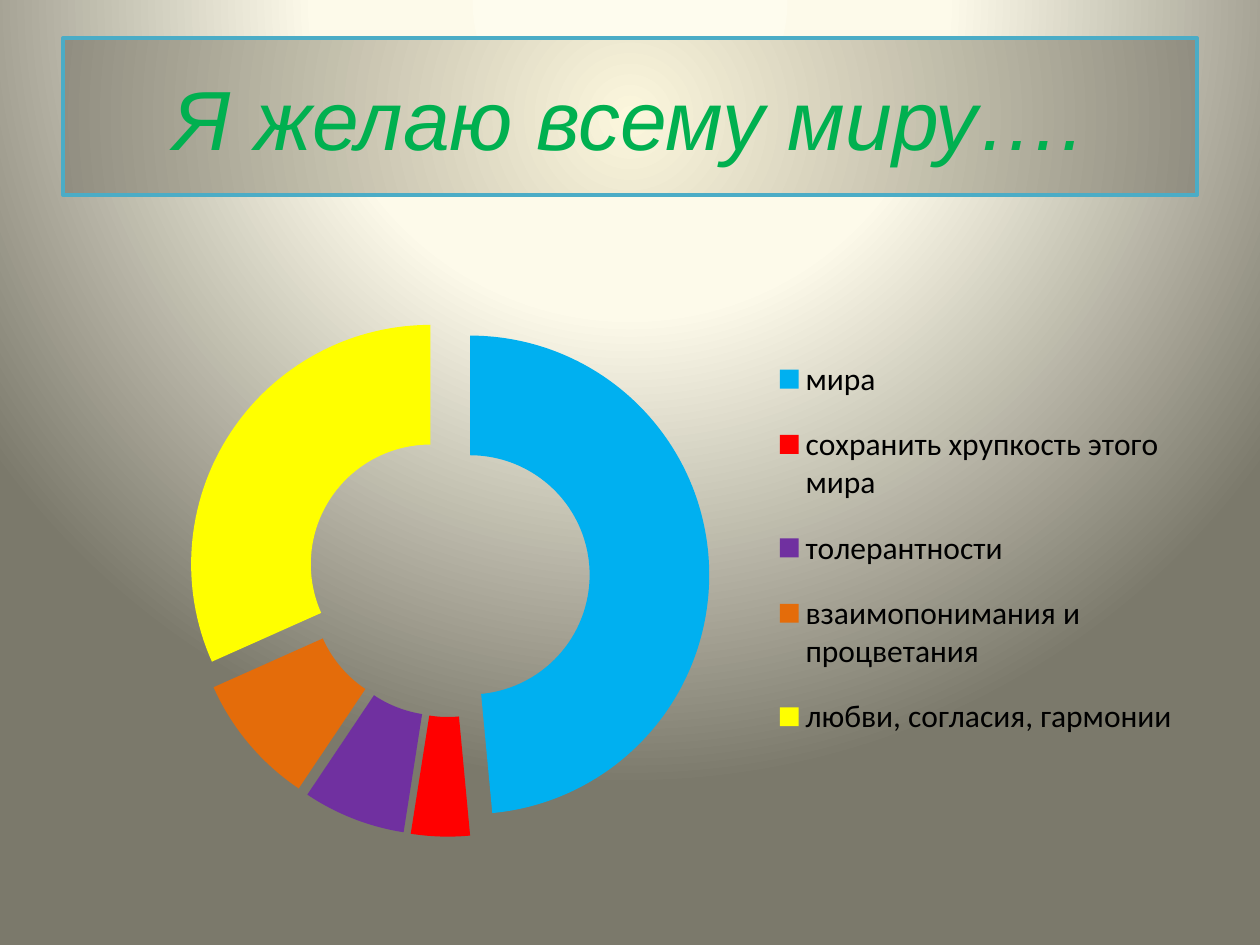
from lxml import etree
from pptx import Presentation
from pptx import util as u
from pptx.chart.data import CategoryChartData
from pptx.dml.color import RGBColor
from pptx.enum import chart as ch, shapes, text
from pptx.oxml.ns import qn

WISHES = [
    ("мира", 49, "00B0F0"),
    ("сохранить хрупкость этого мира", 4, "FF0000"),
    ("толерантности", 7, "7030A0"),
    ("взаимопонимания и процветания", 9, "E46C0A"),
    ("любви, согласия, гармонии", 32, "FFFF00"),
]
TITLE_FONT = {"name": "Arial", "size": u.Pt(48), "italic": True}
CHART_FONT = {"name": "Calibri", "size": u.Pt(18)}


def rgb(value):
    return RGBColor.from_string(value)


def set_font(font, values, color):
    for name, value in values.items():
        setattr(font, name, value)
    font.color.rgb = rgb(color)


def add(parent, tag, **attrs):
    return etree.SubElement(parent, qn(tag), {k: str(v) for k, v in attrs.items()})


def radial(fill, owner, stops, focus):
    fill.gradient()
    grad = next(owner.iter(qn("a:gradFill")))
    for child in list(grad):
        grad.remove(child)
    gs_list = add(grad, "a:gsLst")
    for pos, color in stops:
        add(add(gs_list, "a:gs", pos=pos * 1000), "a:srgbClr", val=color)
    sides = {side: v * 1000 for side, v in zip("ltrb", focus)}
    add(add(grad, "a:path", path="circle"), "a:fillToRect", **sides)


def place(parent, index, box, target=None):
    for old in parent.findall(qn("c:layout")):
        parent.remove(old)
    layout = add(parent, "c:layout")
    parent.insert(index, layout)
    manual = add(layout, "c:manualLayout")
    if target:
        add(manual, "c:layoutTarget", val=target)
    for mode in ("xMode", "yMode"):
        add(manual, f"c:{mode}", val="edge")
    for side, value in zip("xywh", box):
        add(manual, f"c:{side}", val=value)


class Deck:
    """Holds the presentation and its current slide, and draws elements on it."""

    def __init__(self):
        self.prs = Presentation()
        self.prs.slide_width, self.prs.slide_height = u.Inches(10), u.Inches(7.5)
        self.s = self.prs.slides.add_slide(self.prs.slide_layouts[6])

    def background(self, stops, focus):
        radial(self.s.background.fill, self.s._element, stops, focus)

    def title(self, words, box, stops, line, color):
        sp = self.s.shapes.add_shape(shapes.MSO_SHAPE.RECTANGLE, *map(u.Inches, box))
        sp.shadow.inherit = False
        radial(sp.fill, sp._element, stops, (50, 50, 50, 50))
        sp.line.color.rgb = rgb(line)
        sp.line.width = u.Pt(2)
        tf = sp.text_frame
        tf.word_wrap = True
        tf.vertical_anchor = text.MSO_ANCHOR.MIDDLE
        p = tf.paragraphs[0]
        p.alignment = text.PP_ALIGN.CENTER
        r = p.add_run()
        r.text = words
        set_font(r.font, TITLE_FONT, color)

    def doughnut(self, rows, box, plot_box, legend_box, explosion):
        data = CategoryChartData()
        names, values, colors = zip(*rows)
        data.categories = names
        data.add_series("Series 1", values)
        chart = self.s.shapes.add_chart(
            ch.XL_CHART_TYPE.DOUGHNUT, *map(u.Inches, box), data).chart
        set_font(chart.font, CHART_FONT, "000000")
        chart.has_title = False
        chart.has_legend = True
        chart.legend.position = ch.XL_LEGEND_POSITION.RIGHT
        chart.legend.include_in_layout = False
        plot = chart.plots[0]
        plot.vary_by_categories = True
        series = plot.series[0]
        ser = series._element
        explode = add(ser, "c:explosion", val=explosion)
        ser.find(qn("c:tx")).addnext(explode)
        for i, color in enumerate(colors):
            fill = series.points[i].format.fill
            fill.solid()
            fill.fore_color.rgb = rgb(color)
        place(next(chart._chartSpace.iter(qn("c:plotArea"))), 0, plot_box, "inner")
        place(chart.legend._element, 1, legend_box)


def main():
    deck = Deck()
    deck.background([(0, "FEFCEE"), (40, "FDFAEA"), (100, "7B796B")], (50, -80, 50, 180))
    deck.title("Я желаю всему миру….", (0.5, 0.3, 9, 1.25),
               [(0, "FCF7DD"), (100, "918E81")], "4BACC6", "00B050")
    deck.doughnut(WISHES, (0.5, 1.75, 9, 4.95), (0.11, 0.15, 0.46, 0.84),
                  (0.62, 0.18, 0.37, 0.69), 18)
    deck.prs.save("out.pptx")


if __name__ == "__main__":
    main()
